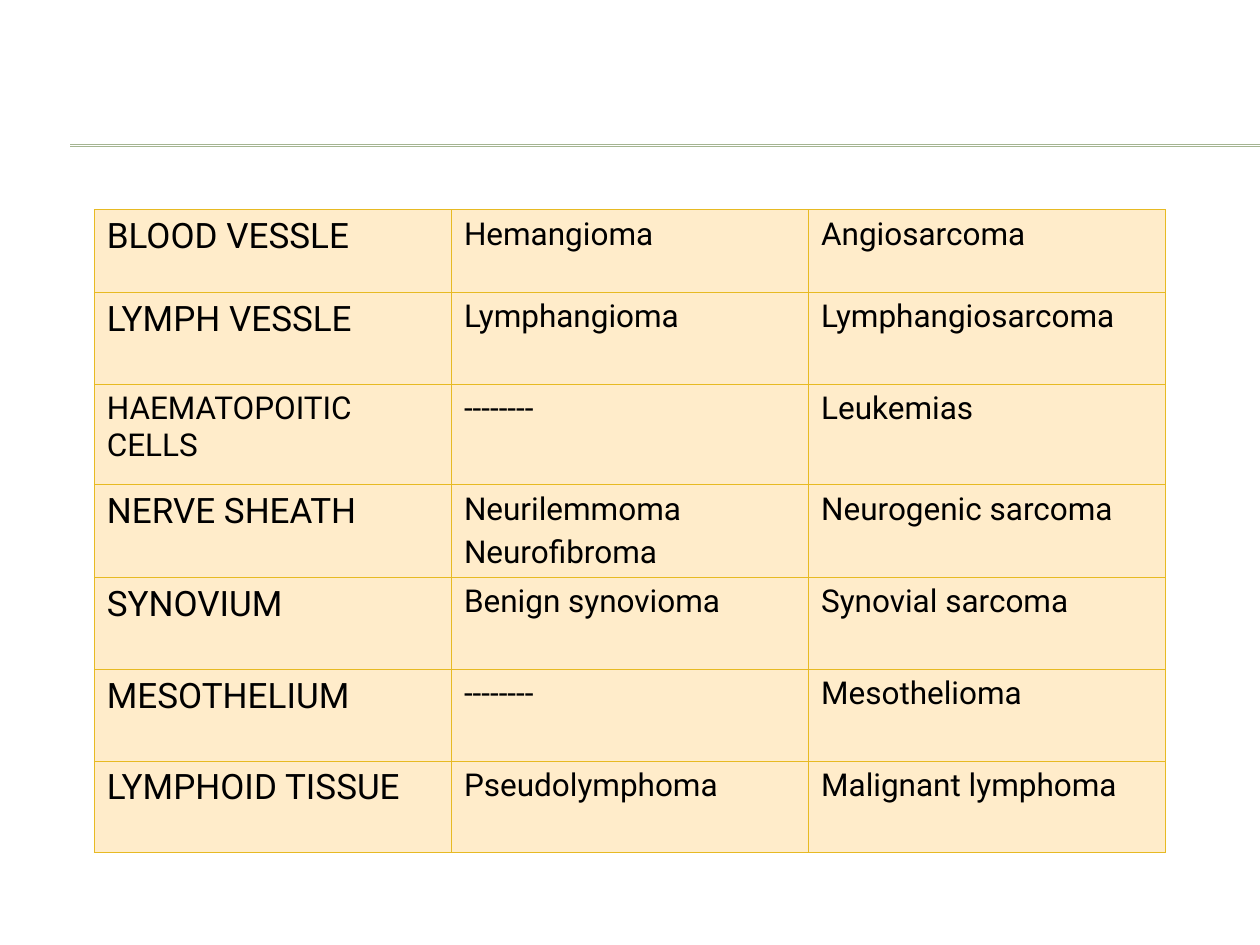
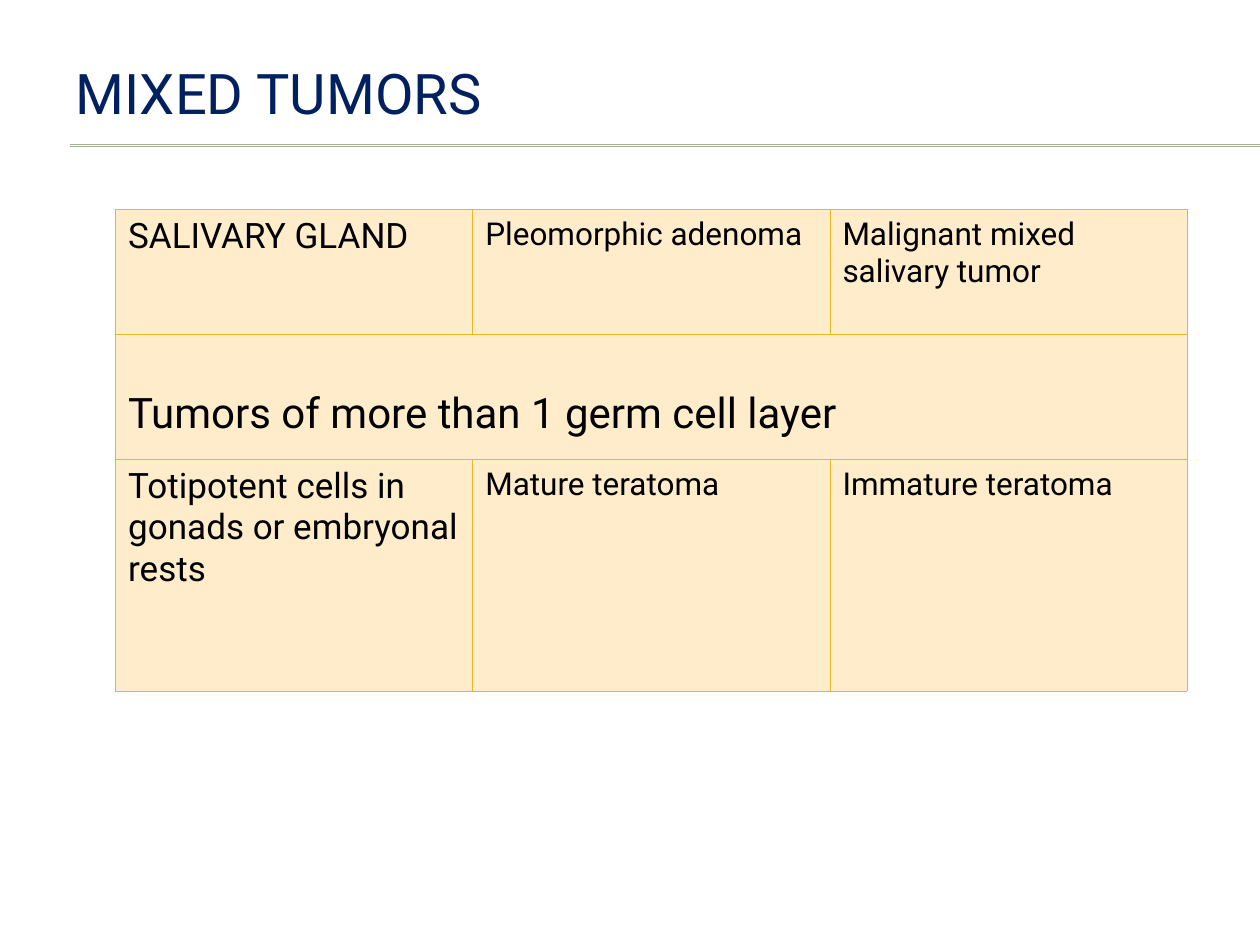
from lxml.etree import SubElement
from pptx import Presentation
from pptx.dml.color import RGBColor
from pptx.enum.shapes import MSO_CONNECTOR
from pptx.enum.text import MSO_ANCHOR
from pptx.oxml.ns import qn
from pptx.util import Cm, Pt

HUES = {"title": "002060", "text": "000000", "rule": "A5B592",
        "edge": "E7BA23", "cell": "FFECCA"}
FONT = "Roboto"
COLS = 3
WIDE = 7.2
TOP = 4.23
RULES = (2.92, 2.95)

SLIDES = [
    {"title": None, "left": 1.9,
     "rows": [
         (1.66, ["BLOOD VESSLE", "Hemangioma", "Angiosarcoma"]),
         (1.85, ["LYMPH VESSLE", "Lymphangioma", "Lymphangiosarcoma"]),
         (2.03, ["HAEMATOPOITIC CELLS", "--------", "Leukemias"]),
         (1.85, ["NERVE SHEATH", "Neurilemmoma\nNeurofibroma", "Neurogenic sarcoma"]),
         (1.85, ["SYNOVIUM", "Benign synovioma", "Synovial sarcoma"]),
         (1.85, ["MESOTHELIUM", "--------", "Mesothelioma"]),
         (1.85, ["LYMPHOID TISSUE", "Pseudolymphoma", "Malignant lymphoma"]),
     ]},
    {"title": "MIXED TUMORS", "left": 2.33,
     "rows": [
         (2.52, ["SALIVARY GLAND", "Pleomorphic adenoma", "Malignant mixed salivary tumor"]),
         (2.52, ["Tumors of more than 1 germ cell layer"]),
         (4.66, ["Totipotent cells in gonads or embryonal rests",
                 "Mature teratoma", "Immature teratoma"]),
     ]},
]
SMALL = {"HAEMATOPOITIC CELLS"}


def hue(name):
    return RGBColor.from_string(HUES[name])


def write(frame, text, size=18, color="text"):
    frame.word_wrap = True
    for i, line in enumerate(text.split("\n")):
        para = frame.add_paragraph() if i else frame.paragraphs[0]
        if i:
            para.space_before = Pt(size * 0.2)
        run = para.add_run()
        run.text = line
        run.font.name = FONT
        run.font.size = Pt(size)
        run.font.color.rgb = hue(color)


def rule(slide, y):
    line = slide.shapes.add_connector(
        MSO_CONNECTOR.STRAIGHT, Cm(1.42), Cm(y), Cm(25.4), Cm(y))
    line.line.color.rgb = hue("rule")
    line.line.width = Pt(0.75)
    SubElement(line._element.spPr, qn("a:effectLst"))


def head(slide, text):
    box = slide.shapes.add_textbox(Cm(1.27), Cm(0.84), Cm(22.86), Cm(2.03))
    box.text_frame.vertical_anchor = MSO_ANCHOR.MIDDLE
    write(box.text_frame, text, size=32, color="title")


def dress(cell):
    props = cell._tc.get_or_add_tcPr()
    for side in ("lnL", "lnR", "lnT", "lnB"):
        edge = SubElement(props, qn(f"a:{side}"), w=str(Pt(0.5)))
        fill = SubElement(edge, qn("a:solidFill"))
        SubElement(fill, qn("a:srgbClr"), val=HUES["edge"])
    cell.fill.solid()
    cell.fill.fore_color.rgb = hue("cell")


def grid(slide, left, rows):
    high = sum(tall for tall, _ in rows)
    table = slide.shapes.add_table(
        len(rows), COLS, Cm(left), Cm(TOP), Cm(WIDE * COLS), Cm(high)).table
    table.first_row = False
    table.horz_banding = False
    for col in table.columns:
        col.width = Cm(WIDE)
    for r, (tall, texts) in enumerate(rows):
        table.rows[r].height = Cm(tall)
        for c in range(COLS):
            dress(table.cell(r, c))
        band = len(texts) == 1
        if band:
            table.cell(r, 0).merge(table.cell(r, COLS - 1))
            table.cell(r, 0).margin_top = Cm(1.1)
        for c, text in enumerate(texts):
            size = 24 if band else 18 if c or text in SMALL else 20
            write(table.cell(r, c).text_frame, text, size=size)


def main():
    deck = Presentation()
    deck.slide_width, deck.slide_height = Cm(25.4), Cm(19.05)
    for page in SLIDES:
        slide = deck.slides.add_slide(deck.slide_layouts[6])
        for y in RULES:
            rule(slide, y)
        if page["title"]:
            head(slide, page["title"])
        grid(slide, page["left"], page["rows"])
    deck.save("out.pptx")


if __name__ == "__main__":
    main()
